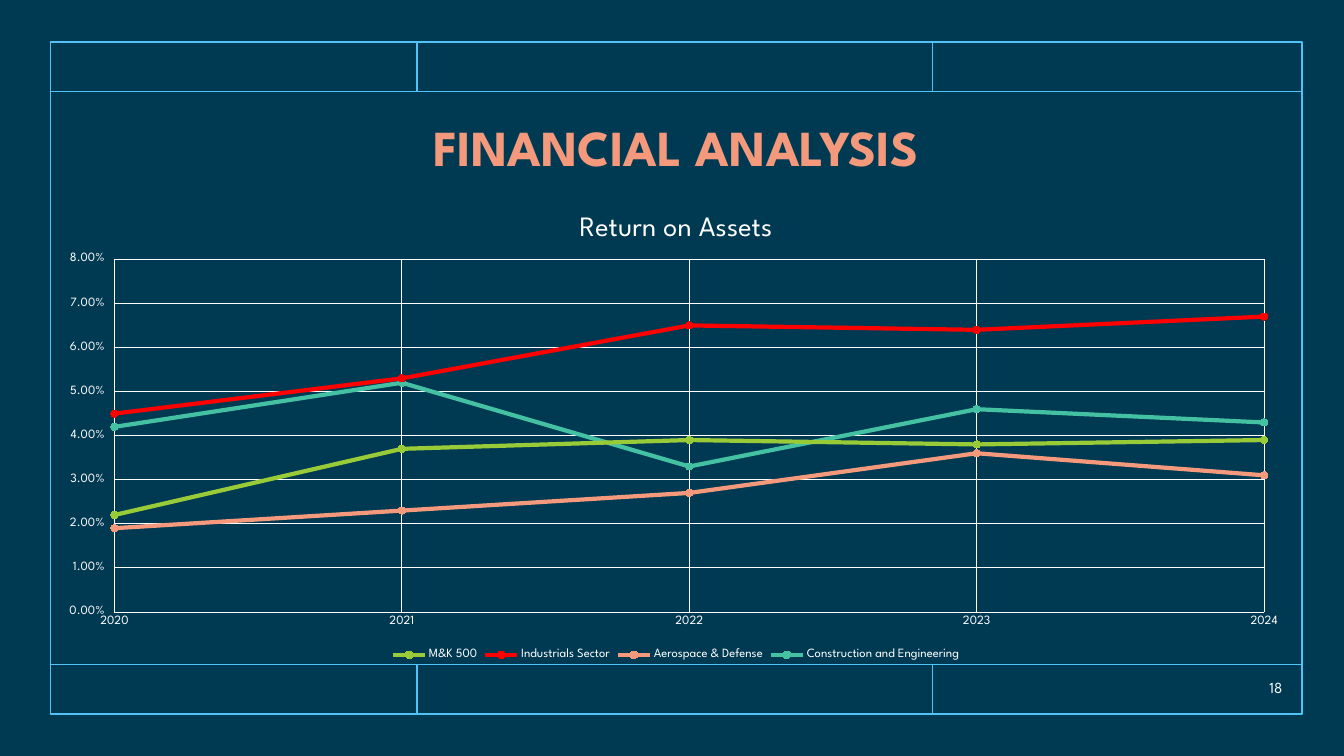
from lxml.etree import SubElement
from pptx import Presentation
from pptx.chart.data import XyChartData
from pptx.dml.color import RGBColor
from pptx.enum.chart import XL_AXIS_CROSSES as Cross, XL_TICK_LABEL_POSITION as Label
from pptx.enum.chart import XL_CHART_TYPE as Chart, XL_LEGEND_POSITION as Legend
from pptx.enum.chart import XL_MARKER_STYLE as Marker, XL_TICK_MARK as Tick
from pptx.enum.shapes import MSO_CONNECTOR as Line, MSO_SHAPE as Shape
from pptx.enum.text import MSO_ANCHOR as Anchor, PP_ALIGN as Align
from pptx.oxml import parse_xml
from pptx.oxml.ns import nsdecls, qn
from pptx.util import Pt

SCALE = 914400 / 96
FONT = "League Spartan"
NAVY, SKY, CORAL, WHITE = "003A52", "51C3F9", "F4997C", "FFFFFF"
YEARS = range(2024, 2019, -1)
# name, line colour, marker colour, return for each year
SERIES = [
    ("M&K 500", "99CB38", "99CB38", (0.039, 0.038, 0.039, 0.037, 0.022)),
    ("Industrials Sector", "FF0000", CORAL, (0.067, 0.064, 0.065, 0.053, 0.045)),
    ("Aerospace & Defense", CORAL, "37A76F", (0.031, 0.036, 0.027, 0.023, 0.019)),
    ("Construction and Engineering", "44C1A3", "44C1A3",
     (0.043, 0.046, 0.033, 0.052, 0.042)),
]


def px(*nums):
    return [round(n * SCALE) for n in nums]


def rgb(code):
    return RGBColor.from_string(code)


def style(font, size, color=WHITE, bold=False):
    font.name, font.size, font.bold = FONT, Pt(size), bold
    font.color.rgb = rgb(color)


def stroke(line, color, width):
    line.color.rgb = rgb(color)
    line.width = Pt(width)


def text(slide, box, words, size, color=WHITE, bold=False, align=Align.CENTER, gap=1.0):
    frame = slide.shapes.add_textbox(*px(*box)).text_frame
    frame.word_wrap = True
    frame.vertical_anchor = Anchor.MIDDLE
    para = frame.paragraphs[0]
    para.alignment, para.line_spacing = align, gap
    run = para.add_run()
    run.text = words
    style(run.font, size, color, bold)


def rule(slide, x1, y1, x2, y2):
    line = slide.shapes.add_connector(Line.STRAIGHT, *px(x1, y1, x2, y2))
    stroke(line.line, SKY, 1)
    SubElement(line._element.spPr, qn("a:effectLst"))


def frame(slide, box, band):
    """Outer border with a split band along its top and bottom."""
    x, y, w, h = box
    border = slide.shapes.add_shape(Shape.RECTANGLE, *px(*box))
    border.shadow.inherit = False
    border.fill.background()
    stroke(border.line, SKY, 1)
    for top, edge in ((y, y + band), (y + h - band, y + h - band)):
        rule(slide, x, edge, x + w, edge)
        for split in (349, 840):
            rule(slide, x + split, top, x + split, top + band)


def scale(axis, low, high, step, form):
    axis.minimum_scale, axis.maximum_scale, axis.major_unit = low, high, step
    axis.major_tick_mark = axis.minor_tick_mark = Tick.NONE
    axis.has_major_gridlines = True
    stroke(axis.major_gridlines.format.line, WHITE, 0.75)
    stroke(axis.format.line, WHITE, 0.75)
    labels = axis.tick_labels
    labels.number_format, labels.number_format_is_linked = form, False
    style(labels.font, 9)


def place(chart, **sides):
    """Fix the inner plot area as shares of the chart."""
    area = chart._chartSpace.chart.plotArea
    for old in area.findall(qn("c:layout")):
        area.remove(old)
    parts = '<c:layoutTarget val="inner"/><c:xMode val="edge"/><c:yMode val="edge"/>'
    parts += "".join(f'<c:{key} val="{share}"/>' for key, share in sides.items())
    area.insert(0, parse_xml(f'<c:layout {nsdecls("c")}><c:manualLayout>{parts}'
                             '</c:manualLayout></c:layout>'))


def graph(slide, box):
    data = XyChartData(number_format="0.00%")
    for name, _, _, rates in SERIES:
        row = data.add_series(name)
        for year, rate in zip(YEARS, rates):
            row.add_data_point(year, rate)
    chart = slide.shapes.add_chart(Chart.XY_SCATTER_LINES, *px(*box), data).chart
    style(chart.font, 10)
    chart.plots[0].vary_by_categories = False

    # Title and legend
    chart.has_title = True
    run = chart.chart_title.text_frame.paragraphs[0].add_run()
    run.text = "Return on Assets"
    style(run.font, 20)
    chart.chart_title.include_in_layout = False
    chart.has_legend = True
    chart.legend.position = Legend.BOTTOM
    chart.legend.include_in_layout = False
    style(chart.legend.font, 9)

    # Axes and plot area: rate axis on the right, its labels on the left
    scale(chart.category_axis, 2020, 2024, 1, "0")
    scale(chart.value_axis, 0, 0.08, 0.01, "0.00%")
    chart.category_axis.crosses = Cross.MAXIMUM
    chart.value_axis.tick_label_position = Label.LOW
    _, _, w, h = box
    place(chart, x=61 / w, y=63 / h, w=1095 / w, h=336 / h)

    # Lines and markers
    for row, (_, color, dot, _) in zip(chart.plots[0].series, SERIES):
        row.smooth = False
        stroke(row.format.line, color, 3)
        mark = row.marker
        mark.style, mark.size = Marker.CIRCLE, 5
        mark.format.fill.solid()
        mark.format.fill.fore_color.rgb = rgb(dot)
        stroke(mark.format.line, dot, 0.75)


def build(slide, box):
    x, y, w, h = box
    band = 47
    frame(slide, box, band)
    text(slide, (x, y + band, w, 112), "FINANCIAL ANALYSIS", 36,
         color=CORAL, bold=True, gap=0.9)
    text(slide, (x + w - 97, y + h - 40, 88, 29), "18", 11, align=Align.RIGHT)
    graph(slide, (x, y + 144, w, h - band - 144))


def main():
    deck = Presentation()
    deck.slide_width, deck.slide_height = px(1280, 720)
    slide = deck.slides.add_slide(deck.slide_layouts[6])
    slide.background.fill.solid()
    slide.background.fill.fore_color.rgb = rgb(NAVY)
    build(slide, (48, 40, 1192, 640))
    deck.save("out.pptx")


if __name__ == "__main__":
    main()
